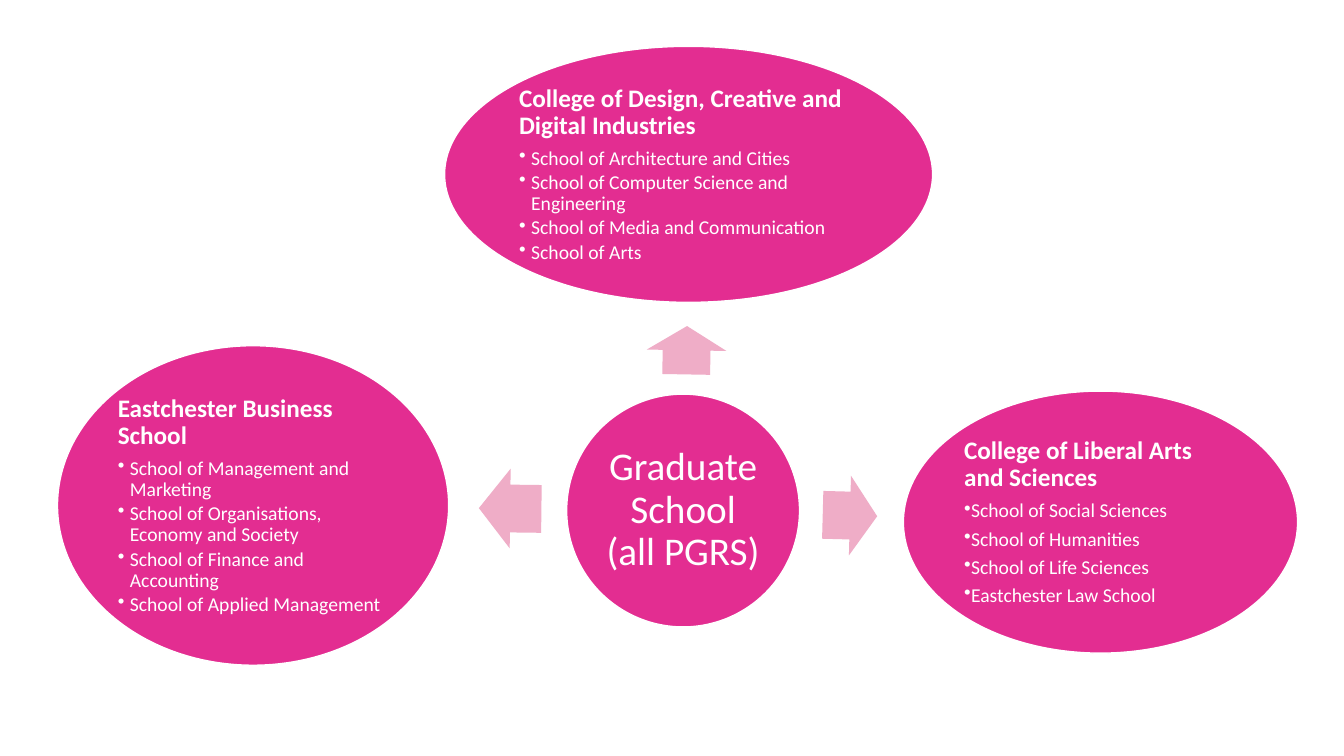
import pptx
import pptx.dml.color
import pptx.enum.shapes
import pptx.enum.text
import pptx.oxml.ns
import pptx.util
from lxml import etree

PINK = pptx.dml.color.RGBColor(0xE3, 0x2D, 0x91)
PALE_PINK = pptx.dml.color.RGBColor(0xEF, 0xAD, 0xC7)
WHITE = pptx.dml.color.RGBColor(0xFF, 0xFF, 0xFF)
EMU_PER_PX = 9144
FONT = "Calibri"
SHAPES = pptx.enum.shapes.MSO_SHAPE
ALIGN = pptx.enum.text.PP_ALIGN
ANCHOR = pptx.enum.text.MSO_ANCHOR

HUB = (562, 391, 231, 231)
COLLEGES = [
    ((441, 46, 484, 254), "College of Design, Creative and Digital Industries", 12, 0.15, [
        "School of Architecture and Cities",
        "School of Computer Science and Engineering",
        "School of Media and Communication",
        "School of Arts",
    ]),
    ((896, 388, 391, 260), "College of Liberal Arts and Sciences", 0, 0.35, [
        "School of Social Sciences",
        "School of Humanities",
        "School of Life Sciences",
        "Eastchester Law School",
    ]),
    ((57, 343, 388, 317), "Eastchester Business School", 12, 0.15, [
        "School of Management and Marketing",
        "School of Organisations, Economy and Society",
        "School of Finance and Accounting",
        "School of Applied Management",
    ]),
]
ARROWS = [
    ((657, 308, 48, 79), 271),
    ((816, 472, 54, 79), 1.5),
    ((475, 465, 62, 79), 180.7),
]


def px(length):
    return pptx.util.Emu(length * EMU_PER_PX)


def apply(target, values):
    for name, value in values.items():
        setattr(target, name, value)


class SlideBuilder:
    def __init__(self, slide):
        self.slide = slide

    def shape(self, kind, box, color):
        shape = self.slide.shapes.add_shape(kind, *map(px, box))
        shape.shadow.inherit = False
        shape.fill.solid()
        shape.fill.fore_color.rgb = color
        return shape

    def ellipse(self, box, inset):
        shape = self.shape(SHAPES.OVAL, box, PINK)
        shape.line.color.rgb = WHITE
        shape.line.width = pptx.util.Pt(1)
        apply(shape.text_frame, {
            "word_wrap": True,
            "vertical_anchor": ANCHOR.MIDDLE,
            "margin_left": px(inset),
            "margin_right": px(inset),
            "margin_top": px(inset),
            "margin_bottom": px(inset),
        })
        return shape.text_frame

    def arrow(self, box, rotation):
        shape = self.shape(SHAPES.RIGHT_ARROW, box, PALE_PINK)
        shape.line.fill.background()
        shape.rotation = rotation
        shape.adjustments[0] = 0.6
        shape.adjustments[1] = 0.5

    def text(self, paragraph, text, size, bold=False, align=ALIGN.LEFT, gap=0.35):
        apply(paragraph, {
            "alignment": align,
            "line_spacing": 0.9,
            "space_after": pptx.util.Pt(round(size * gap, 1)),
        })
        run = paragraph.add_run()
        run.text = text
        apply(run.font, {"name": FONT, "size": pptx.util.Pt(size), "bold": bold})
        run.font.color.rgb = WHITE

    def bullet(self, paragraph, text, indent, gap):
        self.text(paragraph, text, 14, gap=gap)
        paragraph.level = 1 if indent else 0
        properties = paragraph._p.get_or_add_pPr()
        properties.set("marL", str(px(indent)))
        properties.set("indent", str(px(-indent)))
        mark = etree.SubElement(properties, pptx.oxml.ns.qn("a:buChar"))
        mark.set("char", "•")

    def hub(self, box, text):
        frame = self.ellipse(box, 4)
        self.text(frame.paragraphs[0], text, 28, align=ALIGN.CENTER)

    def college(self, box, name, indent, gap, schools):
        frame = self.ellipse(box, 3)
        self.text(frame.paragraphs[0], name, 18, bold=True)
        for school in schools:
            self.bullet(frame.add_paragraph(), school, indent, gap)


def main():
    presentation = pptx.Presentation()
    presentation.slide_width = px(1333)
    presentation.slide_height = px(750)
    slide = presentation.slides.add_slide(presentation.slide_layouts[6])
    builder = SlideBuilder(slide)
    builder.hub(HUB, "Graduate School (all PGRS)")
    for arrow, college in zip(ARROWS, COLLEGES):
        builder.arrow(*arrow)
        builder.college(*college)
    presentation.save("out.pptx")


if __name__ == "__main__":
    main()
